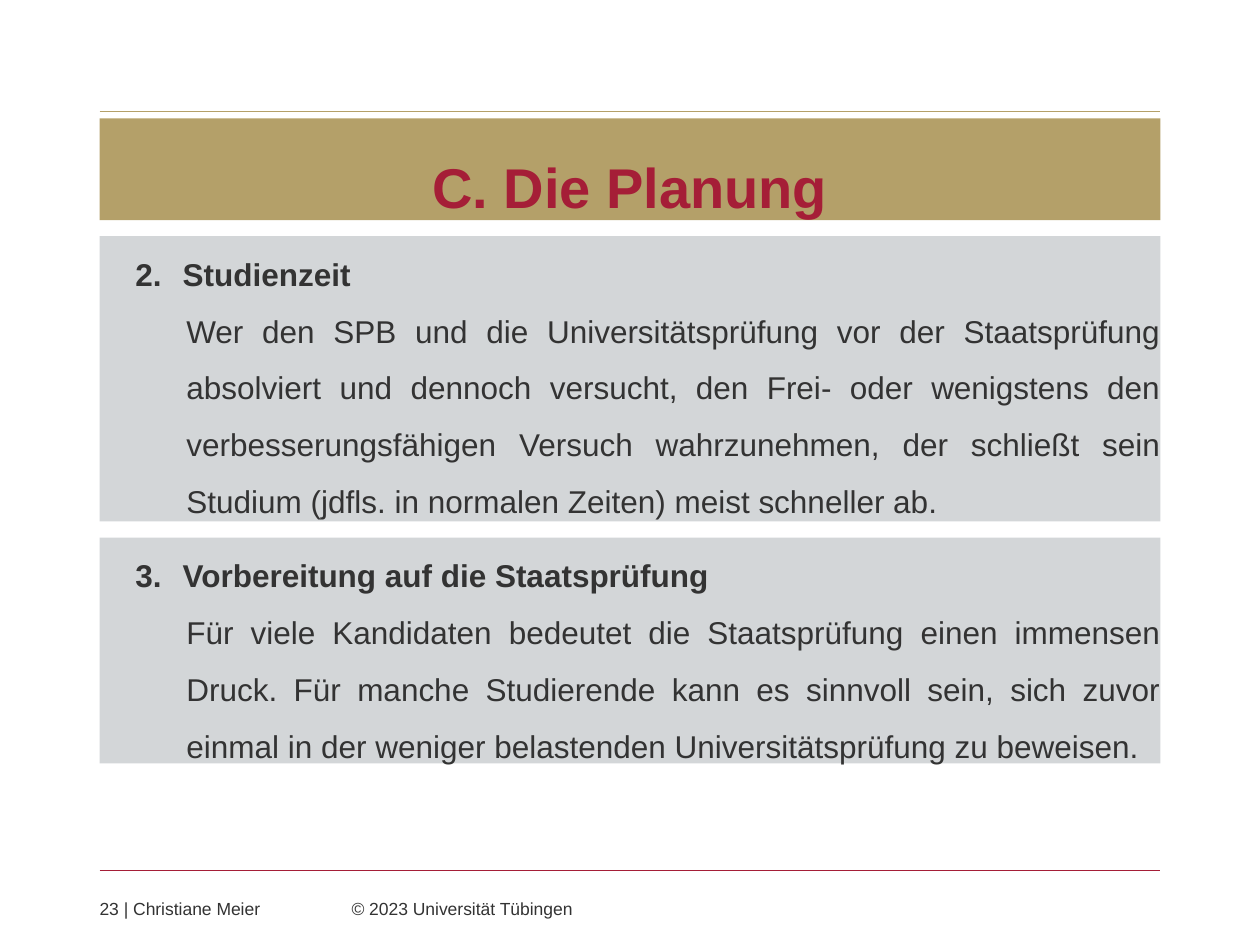
from lxml import etree
from pptx import Presentation
from pptx.dml.color import RGBColor
from pptx.enum.shapes import MSO_CONNECTOR, MSO_SHAPE
from pptx.enum.text import MSO_ANCHOR, PP_ALIGN
from pptx.oxml.ns import qn
from pptx.util import Pt

STRAIGHT = MSO_CONNECTOR.STRAIGHT
RECTANGLE = MSO_SHAPE.RECTANGLE
TOP, BOTTOM = MSO_ANCHOR.TOP, MSO_ANCHOR.BOTTOM
LEFT, CENTER, JUSTIFY = PP_ALIGN.LEFT, PP_ALIGN.CENTER, PP_ALIGN.JUSTIFY

GOLD = RGBColor(0xB4, 0xA0, 0x69)
RED = RGBColor(0xA5, 0x1E, 0x37)
GREY = RGBColor(0xD3, 0xD6, 0xD8)
DARK = RGBColor(0x33, 0x33, 0x33)

FONT = "Arial"
MARGIN = 56.9
WIDTH = 606.2

SECTIONS = [
    (134.9, 163.1, 2, "Studienzeit",
     "Wer den SPB und die Universitätsprüfung vor der Staatsprüfung absolviert "
     "und dennoch versucht, den Frei- oder wenigstens den verbesserungsfähigen "
     "Versuch wahrzunehmen, der schließt sein Studium (jdfls. in normalen Zeiten) "
     "meist schneller ab."),
    (307.2, 129, 3, "Vorbereitung auf die Staatsprüfung",
     "Für viele Kandidaten bedeutet die Staatsprüfung einen immensen Druck. "
     "Für manche Studierende kann es sinnvoll sein, sich zuvor einmal in der "
     "weniger belastenden Universitätsprüfung zu beweisen."),
]


def add_rule(page, top, color):
    rule = page.shapes.add_connector(
        STRAIGHT, Pt(MARGIN), Pt(top), Pt(MARGIN + WIDTH), Pt(top))
    rule.line.color.rgb = color
    rule.line.width = Pt(0.75)
    etree.SubElement(rule.line._get_or_add_ln().getparent(), qn("a:effectLst"))


def prepare_frame(box, anchor=TOP):
    """Remove the insets and turn on wrapping; return the text frame."""
    frame = box.text_frame
    frame.margin_left = frame.margin_right = Pt(0)
    frame.margin_top = frame.margin_bottom = Pt(0)
    frame.word_wrap = True
    frame.vertical_anchor = anchor
    return frame


def add_panel(page, top, height, fill, anchor=TOP):
    panel = page.shapes.add_shape(
        RECTANGLE, Pt(MARGIN), Pt(top), Pt(WIDTH), Pt(height))
    panel.shadow.inherit = False
    panel.fill.solid()
    panel.fill.fore_color.rgb = fill
    panel.line.fill.background()
    return prepare_frame(panel, anchor)


def set_indent(para, left, hanging=0):
    properties = para._p.get_or_add_pPr()
    properties.set("marL", str(Pt(left)))
    properties.set("indent", str(Pt(-hanging)))


def add_number(para, start):
    properties = para._p.get_or_add_pPr()
    etree.SubElement(properties, qn("a:buFont"), typeface="+mj-lt")
    etree.SubElement(properties, qn("a:buAutoNum"),
                     type="arabicPeriod", startAt=str(start))


def add_tab(para, position):
    tabs = etree.SubElement(para._p.get_or_add_pPr(), qn("a:tabLst"))
    etree.SubElement(tabs, qn("a:tab"), pos=str(Pt(position)), algn="l")


def add_span(para, text, size, color=DARK, bold=False):
    span = para.add_run()
    span.text = text
    span.font.name = FONT
    span.font.size = Pt(size)
    span.font.bold = bold
    span.font.color.rgb = color


def add_title(page, top, height, text):
    para = add_panel(page, top, height, GOLD, BOTTOM).paragraphs[0]
    para.alignment = CENTER
    para.line_spacing = 1.5
    add_span(para, text, 32, RED, bold=True)


def add_section(page, top, height, number, heading, body):
    frame = add_panel(page, top, height, GREY)

    para = frame.paragraphs[0]
    para.alignment = LEFT
    para.line_spacing = 1.5
    set_indent(para, 47.5, hanging=27)
    add_number(para, number)
    add_span(para, heading, 18, bold=True)

    para = frame.add_paragraph()
    para.alignment = JUSTIFY
    para.line_spacing = 1.5
    set_indent(para, 49.6)
    add_span(para, body, 18)


def add_footer(page, top, height, text):
    box = page.shapes.add_textbox(Pt(MARGIN), Pt(top), Pt(WIDTH), Pt(height))
    para = prepare_frame(box).paragraphs[0]
    add_tab(para, 144)
    add_span(para, text, 10)


def main():
    deck = Presentation()
    deck.slide_width, deck.slide_height = Pt(720), Pt(540)
    page = deck.slides.add_slide(deck.slide_layouts[6])

    add_rule(page, 63.8, GOLD)
    add_rule(page, 497.3, RED)
    add_title(page, 67.7, 58.1, "C. Die Planung")
    add_footer(page, 513.4, 12.2, "23 | Christiane Meier\t© 2023 Universität Tübingen")
    for section in SECTIONS:
        add_section(page, *section)

    deck.save("out.pptx")


if __name__ == "__main__":
    main()
